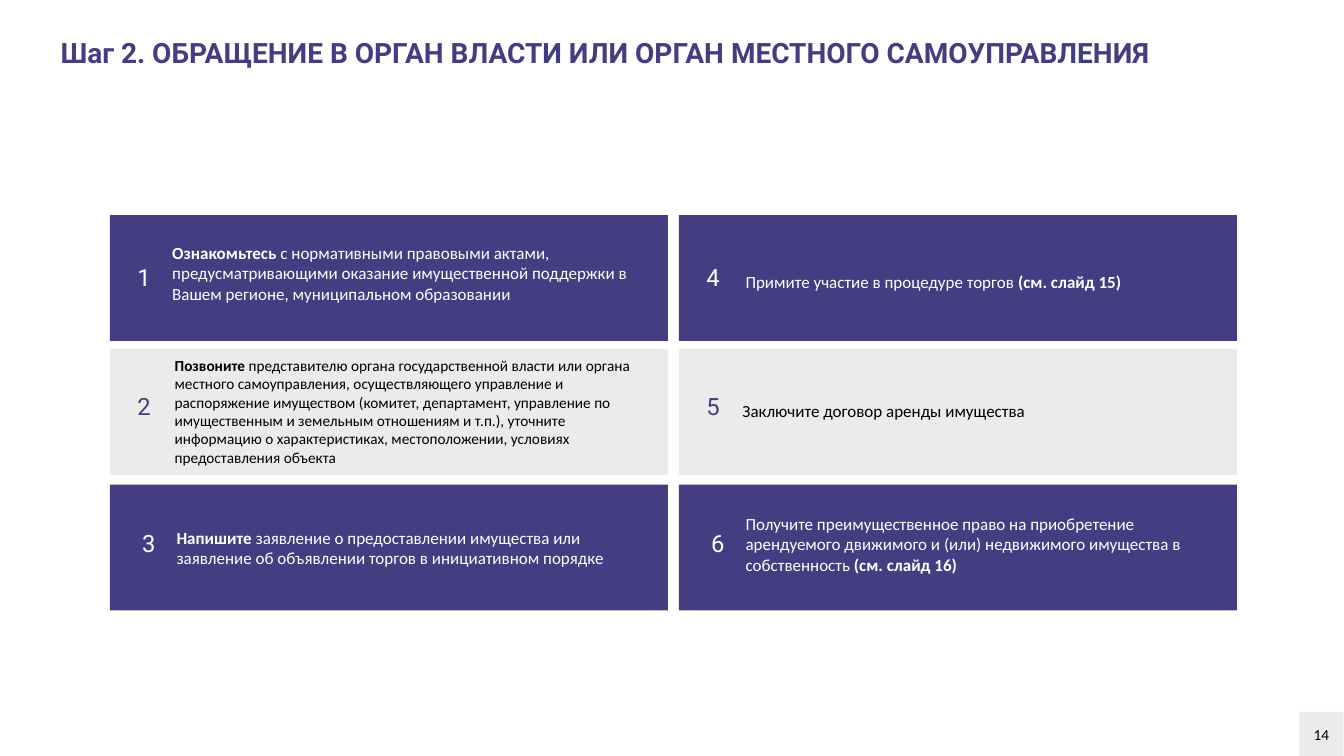
from dataclasses import dataclass

from pptx import Presentation
from pptx.dml.color import RGBColor
from pptx.enum.shapes import MSO_SHAPE
from pptx.enum.text import MSO_ANCHOR, MSO_AUTO_SIZE, PP_ALIGN
from pptx.util import Emu, Pt

PX = 9144  # EMU in one px, 100 px to the inch
COLORS = {"purple": "443D81", "gray": "EBEBEB", "white": "FFFFFF", "black": "000000"}
CARD_WIDTH, CARD_HEIGHT = 913, 206
NUMBER_WIDTH, NUMBER_HEIGHT = 63, 57
COLUMNS = (180, 1111)


@dataclass(frozen=True)
class Row:
    top: int
    fill: str
    number_color: str
    text_color: str
    number_left: int
    number_top: int


@dataclass(frozen=True)
class Step:
    """Text runs are (text, bold) pairs; box is left, top, width, height."""
    runs: tuple[tuple[str, bool], ...]
    box: tuple[int, int, int, int]
    size: int = 20


ROWS = (
    Row(352, "purple", "white", "white", 24, 425),
    Row(571, "gray", "purple", "black", 24, 636),
    Row(793, "purple", "white", "white", 32, 861),
)

STEPS = (
    Step((("Ознакомьтесь", True),
          (" с нормативными правовыми актами, предусматривающими оказание "
           "имущественной поддержки в Вашем регионе, муниципальном образовании", False)),
         (272, 392, 790, 145)),
    Step((("Позвоните", True),
          (" представителю органа государственной власти или органа местного "
           "самоуправления, осуществляющего управление и распоряжение имуществом "
           "(комитет, департамент, управление по имущественным и земельным отношениям "
           "и т.п.), уточните информацию о характеристиках, местоположении, условиях "
           "предоставления объекта", False)),
         (276, 578, 786, 192), 18),
    Step((("Напишите", True),
          (" заявление о предоставлении имущества или заявление об объявлении торгов "
           "в инициативном порядке", False)),
         (279, 858, 779, 111)),
    Step((("Примите участие в процедуре торгов ", False), ("(см. слайд 15)", True)),
         (1210, 439, 790, 44)),
    Step((("Заключите договор аренды имущества", False),),
         (1205, 650, 786, 44)),
    Step((("Получите преимущественное право на приобретение арендуемого движимого "
           "и (или) недвижимого имущества в собственность ", False),
          ("(см. слайд 16)", True)),
         (1210, 835, 779, 111)),
)


def px(*lengths: int) -> list[Emu]:
    return [Emu(length * PX) for length in lengths]


def color(name: str) -> RGBColor:
    return RGBColor.from_string(COLORS[name])


def write(shape, *runs: tuple[str, bool], size: int, ink: str, font: str = "Calibri",
          align=PP_ALIGN.LEFT, anchor=MSO_ANCHOR.TOP, spacing: float = 1.0) -> None:
    frame = shape.text_frame
    frame.word_wrap = True
    frame.auto_size = MSO_AUTO_SIZE.NONE
    frame.vertical_anchor = anchor
    para = frame.paragraphs[0]
    para.alignment = align
    para.line_spacing = spacing
    for text, bold in runs:
        span = para.add_run()
        span.text = text
        span.font.name = font
        span.font.size = Pt(size)
        span.font.bold = bold
        span.font.color.rgb = color(ink)


def add_panel(page, left: int, top: int, width: int, height: int, fill: str):
    panel = page.shapes.add_shape(MSO_SHAPE.RECTANGLE, *px(left, top, width, height))
    panel.shadow.inherit = False
    panel.fill.solid()
    panel.fill.fore_color.rgb = color(fill)
    panel.line.fill.background()
    return panel


def add_step(page, number: int, step: Step, left: int, row: Row) -> None:
    add_panel(page, left, row.top, CARD_WIDTH, CARD_HEIGHT, row.fill)
    text_box = page.shapes.add_textbox(*px(*step.box))
    write(text_box, *step.runs, size=step.size, ink=row.text_color)
    number_box = page.shapes.add_textbox(
        *px(left + row.number_left, row.number_top, NUMBER_WIDTH, NUMBER_HEIGHT))
    write(number_box, (str(number), False), size=28, ink=row.number_color,
          font="Roboto", align=PP_ALIGN.CENTER)


def main() -> None:
    deck = Presentation()
    deck.slide_width, deck.slide_height = px(2199, 1237)
    page = deck.slides.add_slide(deck.slide_layouts[5])

    title = page.shapes.title
    title.left, title.top, title.width, title.height = px(89, 60, 2069, 110)
    write(title, ("Шаг 2. ОБРАЩЕНИЕ В ОРГАН ВЛАСТИ ИЛИ ОРГАН МЕСТНОГО САМОУПРАВЛЕНИЯ", True),
          size=33, ink="purple", font="Roboto", spacing=0.9)

    for index, step in enumerate(STEPS):
        column, row = divmod(index, len(ROWS))
        add_step(page, index + 1, step, COLUMNS[column], ROWS[row])

    page_number = add_panel(page, 2126, 1165, 72, 72, "gray")
    write(page_number, ("14", False), size=18, ink="black",
          align=PP_ALIGN.CENTER, anchor=MSO_ANCHOR.MIDDLE)

    deck.save("out.pptx")


if __name__ == "__main__":
    main()
